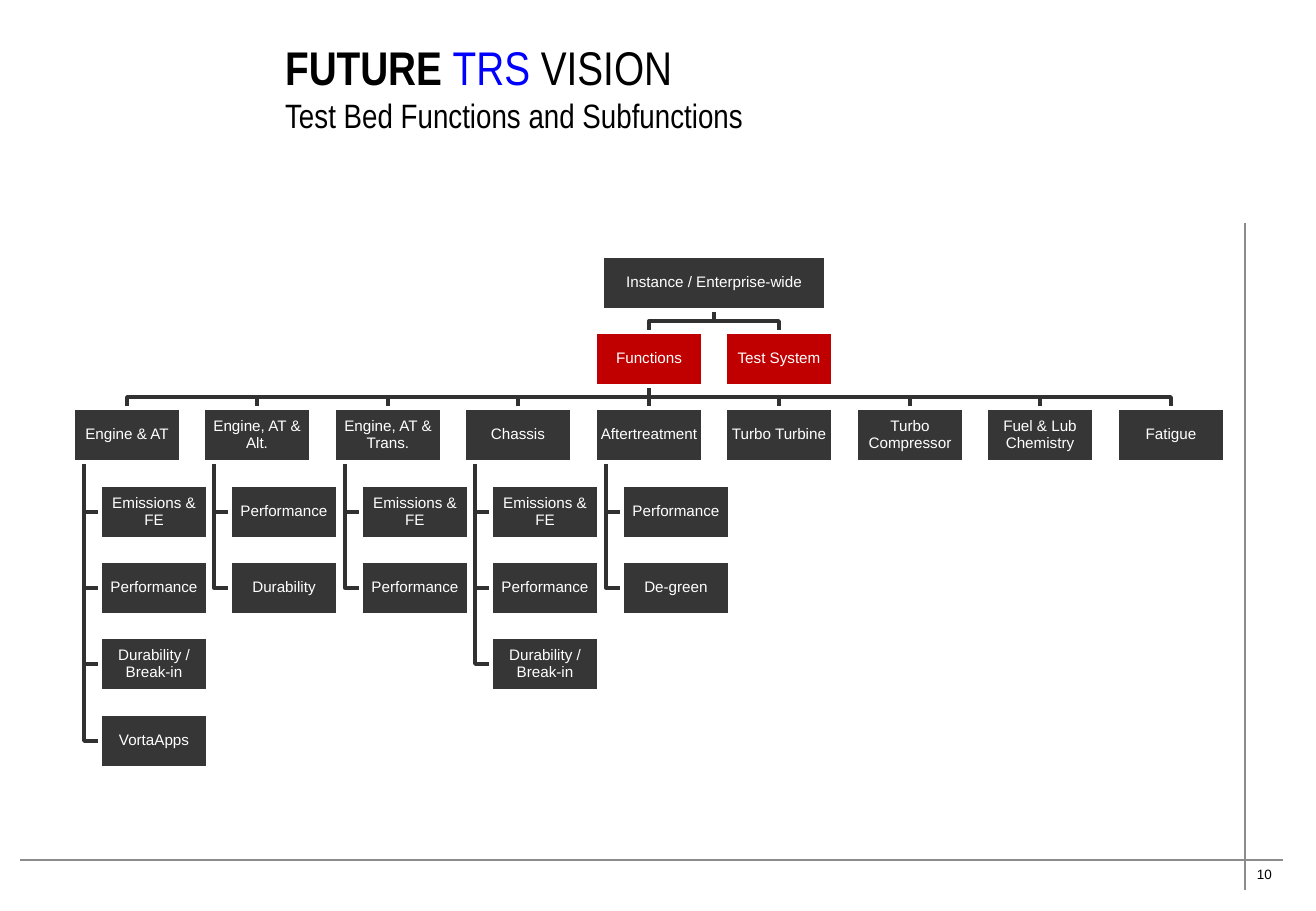
import pptx
import pptx.util
import pptx.dml.color
import pptx.enum.shapes
import pptx.enum.text
import lxml.etree

SCALE = 7526
RGBColor = pptx.dml.color.RGBColor
WHITE = RGBColor(0xFF, 0xFF, 0xFF)
BLACK = RGBColor(0x00, 0x00, 0x00)
BLUE = RGBColor(0x00, 0x00, 0xFF)
RED = RGBColor(0xC0, 0x00, 0x00)
CHARCOAL = RGBColor(0x36, 0x36, 0x36)
DARK = RGBColor(0x31, 0x31, 0x31)
GRAY = RGBColor(0x8B, 0x8B, 0x8B)

BOX_WIDTH, BOX_HEIGHT = 108, 54
ROOT_LEFT, ROOT_WIDTH = 602, 224
CHART_LEFT, CHART_SPAN = 73, 1044
CHART_TOP, CHART_DEPTH = 256, 458
INDENT, STEM = 27, 11
FUNCTIONS_COLUMN, SYSTEM_COLUMN = 4, 5

FUNCTIONS = [
    ("Engine & AT", ["Emissions & FE", "Performance", "Durability / Break-in", "VortaApps"]),
    ("Engine, AT & Alt.", ["Performance", "Durability"]),
    ("Engine, AT & Trans.", ["Emissions & FE", "Performance"]),
    ("Chassis", ["Emissions & FE", "Performance", "Durability / Break-in"]),
    ("Aftertreatment", ["Performance", "De-green"]),
    ("Turbo Turbine", []),
    ("Turbo Compressor", []),
    ("Fuel & Lub Chemistry", []),
    ("Fatigue", []),
]


def px(value):
    return pptx.util.Emu(value * SCALE)


def column_left(column):
    return CHART_LEFT + CHART_SPAN * column // 8


def row_top(row):
    return CHART_TOP + CHART_DEPTH * row // 6


def format_text(font, name, size, color, bold=False):
    font.name = name
    font.size = pptx.util.Pt(size)
    font.color.rgb = color
    font.bold = bold


def add_title(page):
    title = page.shapes.title
    title.left, title.top, title.width, title.height = px(273), px(45), px(951), px(84)
    frame = title.text_frame
    frame.auto_size = pptx.enum.text.MSO_AUTO_SIZE.NONE
    frame.vertical_anchor = pptx.enum.text.MSO_ANCHOR.MIDDLE
    para = frame.paragraphs[0]
    para.alignment = pptx.enum.text.PP_ALIGN.LEFT
    format_text(para.font, "Arial Narrow", 28, BLACK)
    for text, size, color, bold in [
        ("FUTURE ", 28, BLACK, True),
        ("TRS ", 28, BLUE, False),
        ("VISION", 28, BLACK, False),
        ("Test Bed Functions and Subfunctions", 20, BLACK, False),
    ]:
        if size == 20:
            para.add_line_break()
        span = para.add_run()
        span.text = text
        format_text(span.font, "Arial Narrow", size, color, bold)


def add_page_number(page):
    box = page.shapes.add_textbox(px(1245), px(860), px(41), px(28))
    box.text_frame.word_wrap = False
    para = box.text_frame.paragraphs[0]
    para.text = "10"
    format_text(para.font, "Arial", 8, BLACK)


def add_line(page, start, end, color, width):
    line = page.shapes.add_connector(
        pptx.enum.shapes.MSO_CONNECTOR.STRAIGHT, *map(px, start + end))
    line.line.color.rgb = color
    line.line.width = pptx.util.Pt(width)
    properties = line.element.spPr
    lxml.etree.SubElement(properties, pptx.oxml.ns.qn("a:effectLst"))
    return line


def add_box(page, text, left, row, fill=CHARCOAL, width=BOX_WIDTH):
    box = page.shapes.add_shape(
        pptx.enum.shapes.MSO_SHAPE.RECTANGLE,
        px(left), px(row_top(row)), px(width), px(BOX_HEIGHT))
    box.shadow.inherit = False
    box.fill.solid()
    box.fill.fore_color.rgb = fill
    box.line.color.rgb = WHITE
    box.line.width = pptx.util.Pt(2)
    frame = box.text_frame
    frame.word_wrap = True
    frame.vertical_anchor = pptx.enum.text.MSO_ANCHOR.MIDDLE
    frame.margin_left = frame.margin_right = frame.margin_top = frame.margin_bottom = px(1)
    para = frame.paragraphs[0]
    para.text = text
    para.alignment = pptx.enum.text.PP_ALIGN.CENTER
    para.line_spacing = 0.9
    format_text(para.font, "Arial", 9, WHITE)
    return box


def send_to_back(page, shape):
    page.shapes.element.insert(2, shape.element)


def add_route(page, points):
    builder = page.shapes.build_freeform(*points[0], scale=SCALE)
    builder.add_line_segments(points[1:], close=False)
    route = builder.convert_to_shape()
    route.shadow.inherit = False
    route.fill.background()
    route.line.color.rgb = DARK
    route.line.width = pptx.util.Pt(2)
    send_to_back(page, route)


def add_branch(page, parent_x, child_x, row):
    start, end = row_top(row - 1) + BOX_HEIGHT, row_top(row)
    middle = (start + end) // 2
    add_route(page, [(parent_x, start), (parent_x, middle), (child_x, middle), (child_x, end)])


def add_subfunctions(page, left, names):
    stem = left + STEM
    for row, name in enumerate(names, start=3):
        add_box(page, name, left + INDENT, row)
        middle = row_top(row) + BOX_HEIGHT // 2
        add_route(page, [(stem, row_top(2) + BOX_HEIGHT), (stem, middle), (left + INDENT, middle)])


def add_chart_tree(page):
    add_box(page, "Instance / Enterprise-wide", ROOT_LEFT, 0, width=ROOT_WIDTH)
    functions_box = add_box(page, "Functions", column_left(FUNCTIONS_COLUMN), 1, RED)
    add_box(page, "Test System", column_left(SYSTEM_COLUMN), 1, RED)
    functions_x = column_left(FUNCTIONS_COLUMN) + BOX_WIDTH // 2
    for column in (FUNCTIONS_COLUMN, SYSTEM_COLUMN):
        add_branch(page, ROOT_LEFT + ROOT_WIDTH // 2, column_left(column) + BOX_WIDTH // 2, 1)
    for column, (name, subfunctions) in enumerate(FUNCTIONS):
        left = column_left(column)
        box = add_box(page, name, left, 2)
        if column == FUNCTIONS_COLUMN:
            link = add_line(page, (functions_x, row_top(1) + BOX_HEIGHT),
                            (functions_x, row_top(2)), DARK, 2)
            link.begin_connect(functions_box, 2)
            link.end_connect(box, 0)
            send_to_back(page, link)
        else:
            add_branch(page, functions_x, left + BOX_WIDTH // 2, 2)
        add_subfunctions(page, left, subfunctions)


def main():
    deck = pptx.Presentation()
    deck.slide_width, deck.slide_height = px(1316), px(911)
    page = deck.slides.add_slide(deck.slide_layouts[5])
    add_title(page)
    add_page_number(page)
    add_line(page, (20, 860), (1283, 860), GRAY, 1)
    add_line(page, (1245, 890), (1245, 223), GRAY, 1)
    add_chart_tree(page)
    deck.save("out.pptx")


if __name__ == "__main__":
    main()
